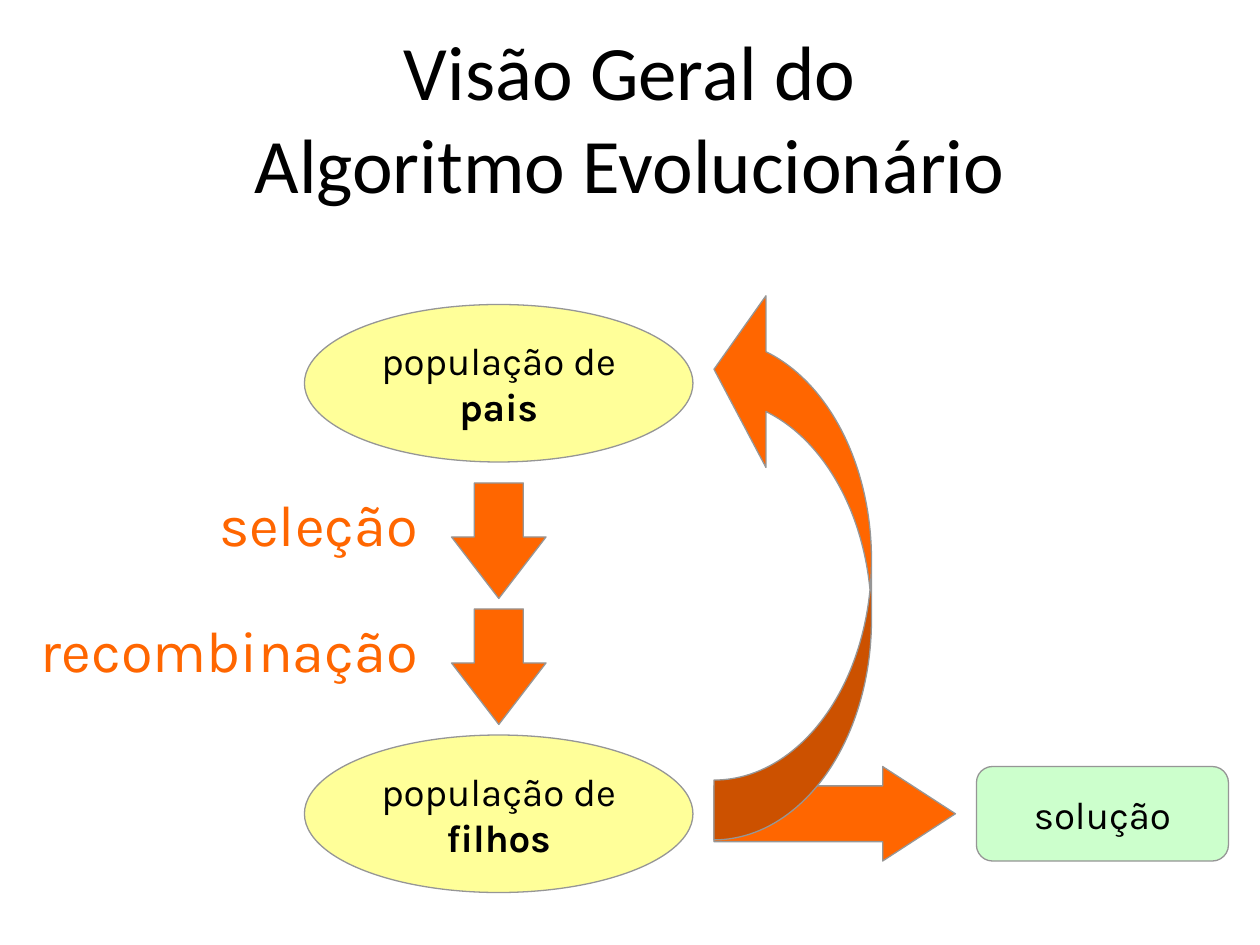
from pptx import Presentation
from pptx.dml.color import RGBColor
from pptx.enum.shapes import MSO_SHAPE
from pptx.enum.text import MSO_ANCHOR, MSO_AUTO_SIZE, PP_ALIGN
from pptx.util import Pt

# Content: all lengths in points
COLORS = {"text": "000000", "line": "969696", "population": "FFFF99",
          "arrow": "FF6600", "solution": "CCFFCC"}
TITLE = "Visão Geral do\vAlgoritmo Evolucionário"
POPULATIONS = [("pais", 174), ("filhos", 420)]  # bold word, top
STEPS = ["seleção", "recombinação"]
SOLUTION = "solução"
STEP_TOP, STEP_GAP = 276, 72


def color(name):
    return RGBColor.from_string(COLORS[name])


def box(left, top, width, height):
    return [Pt(v) for v in (left, top, width, height)]


def write(sp, text, size, font="Karla", fill="text", align=PP_ALIGN.CENTER,
          anchor=MSO_ANCHOR.MIDDLE, wrap=False):
    tf = sp.text_frame
    tf.text = text
    tf.word_wrap = wrap
    tf.auto_size = MSO_AUTO_SIZE.NONE
    tf.vertical_anchor = anchor
    for p in tf.paragraphs:
        p.alignment = align
        for r in p.runs:
            r.font.name, r.font.size = font, Pt(size)
            r.font.color.rgb = color(fill)
    return tf


def add_shape(kind, place, fill, adjustments=()):
    sp = s.shapes.add_shape(kind, *box(*place))
    sp.shadow.inherit = False
    sp.fill.solid()
    sp.fill.fore_color.rgb = color(fill)
    sp.line.color.rgb = color("line")
    sp.line.width = Pt(0.75)
    for i, value in enumerate(adjustments):
        sp.adjustments[i] = value
    return sp


prs = Presentation()
prs.slide_width, prs.slide_height = Pt(720), Pt(540)
s = prs.slides.add_slide(prs.slide_layouts[5])

# Title
title = s.shapes.title
title.left, title.top, title.width, title.height = box(36, 10, 648, 113)
write(title, TITLE, 44, "Calibri", wrap=True)

# Populations
for word, top in POPULATIONS:
    sp = add_shape(MSO_SHAPE.OVAL, (174, top, 222, 90), "population")
    tf = write(sp, f"população de\n{word}", 22)
    tf.paragraphs[1].runs[0].font.bold = True

# Steps: a label and a downward arrow each
for i, step in enumerate(STEPS):
    top = STEP_TOP + i * STEP_GAP
    sp = add_shape(MSO_SHAPE.RIGHT_ARROW, (252, top + 6, 66, 54), "arrow", (0.52, 0.65))
    sp.rotation = 90
    label = s.shapes.add_textbox(*box(0, top, 246, 47))
    write(label, step, 33, fill="arrow", align=PP_ALIGN.RIGHT,
          anchor=MSO_ANCHOR.TOP, wrap=True)

# Solution
sp = add_shape(MSO_SHAPE.ROUNDED_RECTANGLE, (558, 438, 144, 54), "solution", (0.17,))
write(sp, SOLUTION, 22)
add_shape(MSO_SHAPE.RIGHT_ARROW, (408, 438, 138, 54), "arrow", (0.59, 0.77))

# Loop from the children back to the parents
loop = add_shape(MSO_SHAPE.CURVED_LEFT_ARROW, (408, 162, 90, 318), "arrow",
                 (0.38, 1.09, 0.33))
loop._element.spPr.xfrm.set("flipV", "1")

prs.save("out.pptx")
